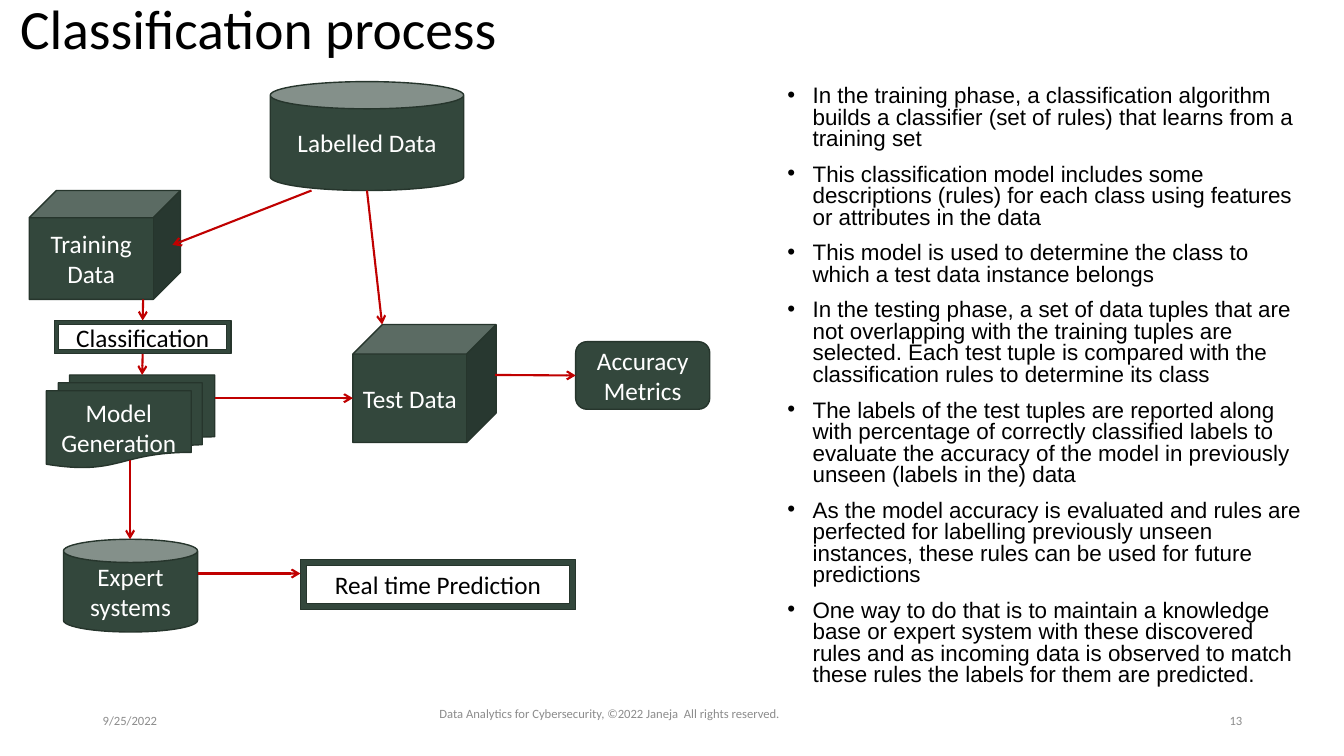
from lxml.etree import SubElement
from pptx import Presentation
from pptx.dml.color import RGBColor
from pptx.enum.shapes import MSO_CONNECTOR as Connector, MSO_SHAPE as Shape
from pptx.enum.text import MSO_ANCHOR as Anchor, MSO_AUTO_SIZE as AutoSize, PP_ALIGN as Align
from pptx.oxml.ns import qn
from pptx.util import Inches, Pt

GREEN, OUTLINE, RED = "33473C", "26352C", "C00000"
BLACK, WHITE, GRAY = "000000", "FFFFFF", "8C8C8C"
TOP, LEFT, BOTTOM = 0, 1, 2

NODES = {
    "Labelled Data": (Shape.CAN, 2.39, 0, 1.92, 1.08, WHITE),
    "Training Data": (Shape.CUBE, 0, 1.08, 1.5, 1.08, WHITE),
    "Test Data": (Shape.CUBE, 3.21, 2.41, 1.42, 1.17, WHITE),
    "Model Generation": (Shape.FLOWCHART_MULTIDOCUMENT, 0.17, 2.91, 1.67, 0.92, WHITE),
    "Classification": (Shape.FRAME, 0.25, 2.37, 1.75, 0.33, BLACK),
    "Accuracy Metrics": (Shape.ROUNDED_RECTANGLE, 5.42, 2.58, 1.33, 0.67, WHITE),
    "Expert systems": (Shape.CAN, 0.34, 4.54, 1.33, 0.92, WHITE),
    "Real time Prediction": (Shape.FRAME, 2.69, 4.74, 2.73, 0.5, BLACK),
}

ARROWS = [
    ((1.13, 2.16), (1.13, 2.37), None, ("Classification", TOP)),
    ((2.8, 1.08), (1.42, 1.62), None, None),
    ((3.35, 1.08), (3.5, 2.41), None, None),
    ((1.13, 2.7), (1.12, 2.91), ("Classification", BOTTOM), None),
    ((1.84, 3.14), (3.21, 3.14), None, None),
    ((4.62, 2.91), (5.42, 2.91), None, ("Accuracy Metrics", LEFT)),
    ((1, 3.75), (1, 4.54), None, None),
    ((1.67, 4.88), (2.69, 4.88), None, None),
]

POINTS = [
    "In the training phase, a classification algorithm builds a classifier (set of rules) that learns from a training set",
    "This classification model includes some descriptions (rules) for each class using features or attributes in the data",
    "This model is used to determine the class to which a test data instance belongs",
    "In the testing phase, a set of data tuples that are not overlapping with the training tuples are selected. "
    "Each test tuple is compared with the classification rules to determine its class",
    "The labels of the test tuples are reported along with percentage of correctly classified labels "
    "to evaluate the accuracy of the model in previously unseen (labels in the) data",
    "As the model accuracy is evaluated and rules are perfected for labelling previously unseen instances, "
    "these rules can be used for future predictions",
    "One way to do that is to maintain a knowledge base or expert system with these discovered rules "
    "and as incoming data is observed to match these rules the labels for them are predicted.",
]


def color(value):
    return RGBColor.from_string(value)


def write(paragraph, text, size=18, font="Calibri", fill=BLACK, align=Align.LEFT, spacing=1.0, before=0):
    paragraph.alignment = align
    paragraph.line_spacing = spacing
    paragraph.space_before = Pt(before)
    run = paragraph.add_run()
    run.text = text
    run.font.size = Pt(size)
    run.font.name = font
    run.font.color.rgb = color(fill)


def prepare(shape, anchor):
    frame = shape.text_frame
    frame.word_wrap = True
    frame.auto_size = AutoSize.NONE
    frame.vertical_anchor = anchor
    return frame


def place(shape, left, top, width, height):
    shape.left, shape.top = Inches(left), Inches(top)
    shape.width, shape.height = Inches(width), Inches(height)


def add_title(slide, box):
    title = slide.shapes.title
    place(title, *box)
    frame = prepare(title, Anchor.MIDDLE)
    write(frame.paragraphs[0], "Classification process", size=39.6, spacing=0.9)


def add_points(slide, box):
    body = slide.placeholders[1]
    place(body, *box)
    frame = prepare(body, Anchor.TOP)
    for index, point in enumerate(POINTS):
        paragraph = frame.add_paragraph() if index else frame.paragraphs[0]
        write(paragraph, point, size=16, font="Arial", spacing=0.8, before=10)
        properties = paragraph._p.get_or_add_pPr()
        properties.set("marL", str(Inches(0.25)))
        properties.set("indent", str(Inches(-0.25)))
        SubElement(properties, qn("a:buFont")).set("typeface", "Arial")
        SubElement(properties, qn("a:buChar")).set("char", "•")


def add_node(slide, label, kind, left, top, width, height, text_color):
    node = slide.shapes.add_shape(kind, Inches(left), Inches(top), Inches(width), Inches(height))
    node.shadow.inherit = False
    node.fill.solid()
    node.fill.fore_color.rgb = color(GREEN)
    node.line.color.rgb = color(OUTLINE)
    node.line.width = Pt(1)
    frame = prepare(node, Anchor.MIDDLE)
    write(frame.paragraphs[0], label, fill=text_color, align=Align.CENTER)
    return node


def add_arrow(slide, start, end):
    arrow = slide.shapes.add_connector(Connector.STRAIGHT, *map(Inches, start + end))
    arrow.line.color.rgb = color(RED)
    arrow.line.width = Pt(1.5)
    SubElement(arrow.line._get_or_add_ln(), qn("a:tailEnd")).set("type", "arrow")
    SubElement(arrow._element.spPr, qn("a:effectLst"))
    return arrow


def add_diagram(slide, left, top):
    nodes = {}
    for label, (kind, x, y, width, height, text_color) in NODES.items():
        nodes[label] = add_node(slide, label, kind, left + x, top + y, width, height, text_color)
    for start, end, source, target in ARROWS:
        arrow = add_arrow(slide, (left + start[0], top + start[1]), (left + end[0], top + end[1]))
        if source:
            arrow.begin_connect(nodes[source[0]], source[1])
        if target:
            arrow.end_connect(nodes[target[0]], target[1])


def add_footer(slide, left, top, width, height):
    parts = [
        ("9/25/2022", 0, 3, Align.LEFT, Anchor.MIDDLE),
        ("Data Analytics for Cybersecurity, ©2022 Janeja  All rights reserved.", 3.34, 4.81, Align.LEFT, Anchor.TOP),
        ("13", width - 3, 3, Align.RIGHT, Anchor.MIDDLE),
    ]
    for text, x, part_width, align, anchor in parts:
        part = slide.shapes.add_textbox(Inches(left + x), Inches(top), Inches(part_width), Inches(height))
        write(prepare(part, anchor).paragraphs[0], text, size=9, fill=GRAY, align=align)


def main():
    presentation = Presentation()
    presentation.slide_width, presentation.slide_height = Inches(13.33), Inches(7.5)
    slide = presentation.slides.add_slide(presentation.slide_layouts[1])
    add_diagram(slide, 0.29, 0.81)
    add_title(slide, (0.1, 0.04, 11.5, 0.55))
    add_points(slide, (7.71, 0.81, 5.34, 6.32))
    add_footer(slide, 0.92, 6.95, 11.5, 0.4)
    presentation.save("out.pptx")


if __name__ == "__main__":
    main()
